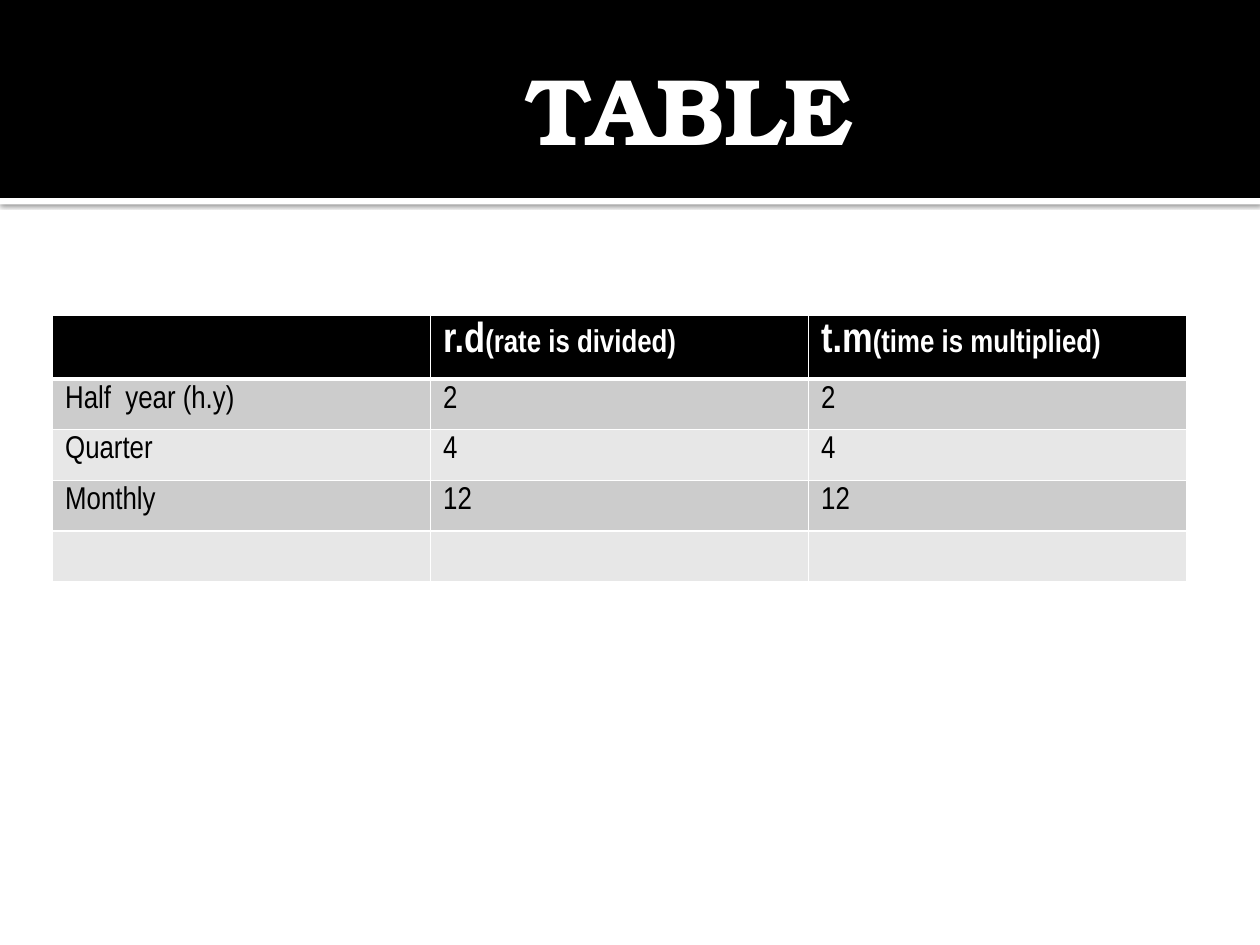
from dataclasses import dataclass

from lxml.etree import SubElement
from pptx import Presentation
from pptx.dml.color import RGBColor
from pptx.enum.shapes import MSO_SHAPE as Preset
from pptx.enum.text import MSO_ANCHOR as Anchor, PP_ALIGN as Align
from pptx.oxml.ns import qn
from pptx.shapes.autoshape import Shape
from pptx.slide import Slide
from pptx.table import _Cell as Cell
from pptx.util import Cm, Pt

WHITE = "FFFFFF"
BLACK = "000000"
BAND_FILLS = ("CCCCCC", "E7E7E7")
TABLE_FONT = "Arial Narrow"
TITLE_FONT = "TeX Gyre Bonum"
COLUMN_WIDTH = Cm(7.62)
HEADER_HEIGHT = Cm(1.03)
ROW_HEIGHT = Cm(0.85)
CELL_MARGIN = Cm(0.13)


@dataclass(frozen=True)
class TextRun:
    text: str
    size: int = 18
    color: str = BLACK
    bold: bool = False
    font: str = TABLE_FONT


@dataclass(frozen=True)
class Band:
    top: float
    height: float
    color: str


HEADER = (
    (),
    (TextRun("r.d", 24, WHITE, True), TextRun("(rate is divided)", 18, WHITE, True)),
    (TextRun("t.m", 24, WHITE, True), TextRun("(time is multiplied)", 18, WHITE, True)),
)
BODY = (
    ("Half  year (h.y)", "2", "2"),
    ("Quarter", "4", "4"),
    ("Monthly", "12", "12"),
    ("", "", ""),
)
TITLE_RULE = Band(3.99, 0.13, WHITE)
TITLE_BAND = Band(0, 3.99, BLACK)


def rgb(color: str) -> RGBColor:
    return RGBColor.from_string(color)


def add_runs(paragraph, runs: tuple[TextRun, ...]) -> None:
    for item in runs:
        run = paragraph.add_run()
        run.text = item.text
        run.font.name = item.font
        run.font.size = Pt(item.size)
        run.font.bold = item.bold
        run.font.color.rgb = rgb(item.color)


def add_band(slide: Slide, band: Band) -> Shape:
    shape = slide.shapes.add_shape(
        Preset.RECTANGLE, 0, Cm(band.top), Cm(25.4), Cm(band.height)
    )
    shape.shadow.inherit = False
    shape.fill.solid()
    shape.fill.fore_color.rgb = rgb(band.color)
    shape.line.fill.background()
    return shape


def add_shadow(shape: Shape) -> None:
    effects = shape._element.spPr.find(qn("a:effectLst"))
    shadow = SubElement(
        effects, qn("a:outerShdw"), blurRad=str(Pt(2.5)), dist=str(Pt(0.8)),
        dir="5400000", algn="t", rotWithShape="0",
    )
    color = SubElement(shadow, qn("a:srgbClr"), val=BLACK)
    SubElement(color, qn("a:alpha"), val="60000")


def add_title(slide: Slide) -> None:
    frame = slide.shapes.add_textbox(Cm(1.27), Cm(0.43), Cm(22.86), Cm(3.48)).text_frame
    frame.word_wrap = True
    frame.vertical_anchor = Anchor.MIDDLE
    frame.margin_left = Cm(9.32)
    frame.margin_right = Cm(0.13)
    paragraph = frame.paragraphs[0]
    paragraph.alignment = Align.LEFT
    add_runs(paragraph, (TextRun("TABLE", 54, WHITE, True, TITLE_FONT),))


def set_borders(cell: Cell, top: float, bottom: float) -> None:
    properties = cell._tc.get_or_add_tcPr()
    widths = {"lnL": 1, "lnR": 1, "lnT": top, "lnB": bottom}
    for side, width in widths.items():
        line = SubElement(properties, qn(f"a:{side}"), w=str(Pt(width)))
        fill = SubElement(line, qn("a:solidFill"))
        SubElement(fill, qn("a:srgbClr"), val=WHITE)


def set_empty_font(paragraph) -> None:
    properties = SubElement(paragraph._p, qn("a:endParaRPr"), sz="1800")
    SubElement(properties, qn("a:latin"), typeface=TABLE_FONT)


def fill_cell(
    cell: Cell, runs: tuple[TextRun, ...], color: str, top: float, bottom: float
) -> None:
    cell.margin_top = cell.margin_bottom = CELL_MARGIN
    set_borders(cell, top, bottom)
    cell.fill.solid()
    cell.fill.fore_color.rgb = rgb(color)
    paragraph = cell.text_frame.paragraphs[0]
    if runs:
        add_runs(paragraph, runs)
    else:
        set_empty_font(paragraph)


def add_rate_table(slide: Slide) -> None:
    row_count = len(BODY) + 1
    column_count = len(HEADER)
    table = slide.shapes.add_table(
        row_count, column_count, Cm(1.06), Cm(6.36),
        COLUMN_WIDTH * column_count, HEADER_HEIGHT + ROW_HEIGHT * len(BODY),
    ).table
    for column in table.columns:
        column.width = COLUMN_WIDTH
    for index, row in enumerate(table.rows):
        row.height = ROW_HEIGHT if index else HEADER_HEIGHT
    for column, runs in enumerate(HEADER):
        fill_cell(table.cell(0, column), runs, BLACK, 1, 3)
    for row, texts in enumerate(BODY, 1):
        color = BAND_FILLS[(row - 1) % 2]
        top = 3 if row == 1 else 1
        for column, text in enumerate(texts):
            runs = (TextRun(text),) if text else ()
            fill_cell(table.cell(row, column), runs, color, top, 1)


def main() -> None:
    presentation = Presentation()
    presentation.slide_width = Cm(25.4)
    presentation.slide_height = Cm(19.05)
    slide = presentation.slides.add_slide(presentation.slide_layouts[6])
    add_shadow(add_band(slide, TITLE_RULE))
    add_band(slide, TITLE_BAND)
    add_title(slide)
    add_rate_table(slide)
    presentation.save("out.pptx")


if __name__ == "__main__":
    main()
